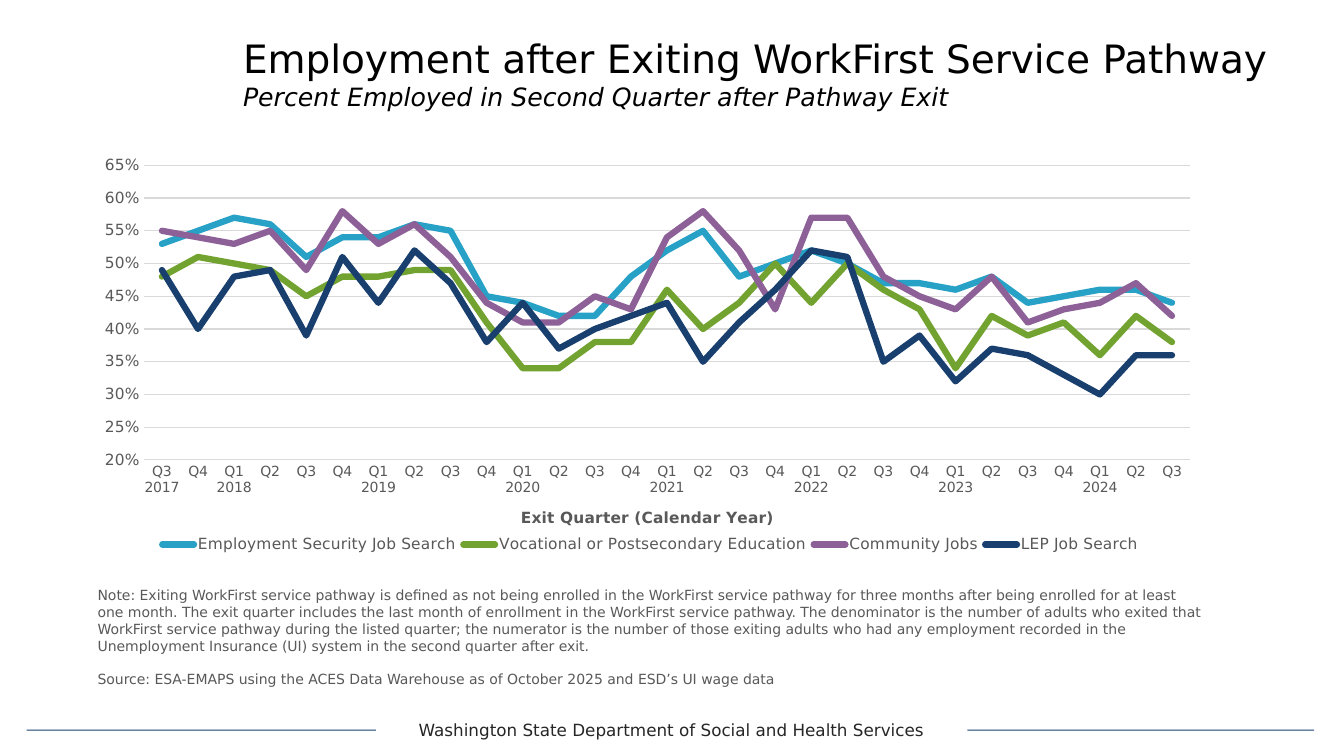
from lxml import etree
from pptx import Presentation
from pptx.chart.data import CategoryChartData
from pptx.dml.color import RGBColor
from pptx.enum.chart import XL_CHART_TYPE as CT, XL_LEGEND_POSITION as LP, XL_TICK_MARK as TM
from pptx.enum.shapes import MSO_CONNECTOR as CONN
from pptx.enum.text import MSO_ANCHOR as ANCHOR, MSO_AUTO_SIZE as FIT, PP_ALIGN as AL
from pptx.oxml.ns import qn
from pptx.util import Cm, Pt

# Content
FONT, GREY, RULE, NAVY = "DejaVu Sans", "595959", "D9D9D9", "193F6F"
TITLE = [
    ("Employment after Exiting WorkFirst Service Pathway", dict(size=Pt(27.9))),
    ("Percent Employed in Second Quarter after Pathway Exit", dict(size=Pt(18), italic=True)),
]
NOTES = [
    "Note: Exiting WorkFirst service pathway is defined as not being enrolled in the WorkFirst "
    "service pathway for three months after being enrolled for at least one month. The exit quarter "
    "includes the last month of enrollment in the WorkFirst service pathway. The denominator is the "
    "number of adults who exited that WorkFirst service pathway during the listed quarter; the "
    "numerator is the number of those exiting adults who had any employment recorded in the "
    "Unemployment Insurance (UI) system in the second quarter after exit.",
    "Source: ESA-EMAPS using the ACES Data Warehouse as of October 2025 and ESD’s UI wage data",
]
FOOTER = "Washington State Department of Social and Health Services"
AXIS_TITLE = "Exit Quarter (Calendar Year)"
FIRST_YEAR, FIRST_QUARTER = 2017, 3
PATHWAYS = [  # name, colour, percent employed by quarter
    ("Employment Security Job Search", "27A1C6",
     [53, 55, 57, 56, 51, 54, 54, 56, 55, 45, 44, 42, 42, 48, 52,
      55, 48, 50, 52, 50, 47, 47, 46, 48, 44, 45, 46, 46, 44]),
    ("Vocational or Postsecondary Education", "72A331",
     [48, 51, 50, 49, 45, 48, 48, 49, 49, 41, 34, 34, 38, 38, 46,
      40, 44, 50, 44, 50, 46, 43, 34, 42, 39, 41, 36, 42, 38]),
    ("Community Jobs", "8D6198",
     [55, 54, 53, 55, 49, 58, 53, 56, 51, 44, 41, 41, 45, 43, 54,
      58, 52, 43, 57, 57, 48, 45, 43, 48, 41, 43, 44, 47, 42]),
    ("LEP Job Search", NAVY,
     [49, 40, 48, 49, 39, 51, 44, 52, 47, 38, 44, 37, 40, 42, 44,
      35, 41, 46, 52, 51, 35, 39, 32, 37, 36, 33, 30, 36, 36]),
]


def rgb(value):
    return RGBColor.from_string(value)


def style(font, color, **values):
    font.name = FONT
    font.color.rgb = rgb(color)
    for key, value in values.items():
        setattr(font, key, value)


def stroke(line, color, width):
    line.color.rgb = rgb(color)
    line.width = Pt(width)


def quarter_label(i):
    year, quarter = divmod(FIRST_QUARTER - 1 + i, 4)
    label = f"Q{quarter + 1}"
    return f"{label}\n{FIRST_YEAR + year}" if i == 0 or quarter == 0 else label


def set_layout(parent, index, inner=False, **box):
    """Place a chart part by fractions of the chart area."""
    for old in parent.findall(qn("c:layout")):
        parent.remove(old)
    layout = etree.Element(qn("c:layout"))
    manual = etree.SubElement(layout, qn("c:manualLayout"))
    if inner:
        etree.SubElement(manual, qn("c:layoutTarget")).set("val", "inner")
    for mode in ("xMode", "yMode"):
        etree.SubElement(manual, qn(f"c:{mode}")).set("val", "edge")
    for key, value in box.items():
        etree.SubElement(manual, qn(f"c:{key}")).set("val", str(value))
    parent.insert(index, layout)


def add_text(s, box, lines, align, color, size):
    sp = s.shapes.add_textbox(*map(Cm, box))
    tf = sp.text_frame
    tf.word_wrap = True
    for i, line in enumerate(lines):
        p = tf.paragraphs[0] if i == 0 else tf.add_paragraph()
        p.alignment = align
        if i:
            p.space_before = Pt(size * 1.16)
        r = p.add_run()
        r.text = line
        style(r.font, color, size=Pt(size))
    return sp


prs = Presentation()
prs.slide_width, prs.slide_height = Cm(33.87), Cm(19.05)
s = prs.slides.add_slide(prs.slide_layouts[5])

# Footer with a rule on each side
footer = add_text(s, (9.47, 18.02, 14.91, 0.76), [FOOTER], AL.CENTER, "262626", 12)
for outer_x, side in ((0.67, 1), (33.12, 3)):
    cx = s.shapes.add_connector(CONN.STRAIGHT, Cm(outer_x), Cm(18.4), Cm(outer_x), Cm(18.4))
    cx.end_connect(footer, side)
    stroke(cx.line, NAVY, 0.75)
    etree.SubElement(cx._element.spPr, qn("a:effectLst"))

# Title and subtitle
title = s.shapes.title
title.left, title.top, title.width, title.height = map(Cm, (5.87, 0, 26.8, 3.68))
tf = title.text_frame
tf.auto_size, tf.word_wrap, tf.vertical_anchor = FIT.NONE, True, ANCHOR.MIDDLE
p = tf.paragraphs[0]
p.alignment = AL.LEFT
for i, (text, fmt) in enumerate(TITLE):
    if i:
        p.add_line_break()
    r = p.add_run()
    r.text = text
    style(r.font, "000000", **fmt)

# Chart
data = CategoryChartData(number_format="0%")
data.categories = [quarter_label(i) for i in range(len(PATHWAYS[0][2]))]
for name, _, values in PATHWAYS:
    data.add_series(name, [v / 100 for v in values])
chart = s.shapes.add_chart(CT.LINE, *map(Cm, (2.21, 3.73, 28.35, 10.92)), data).chart
chart.has_title = False
style(chart.font, "000000", size=Pt(10))
plot = chart.plots[0]
plot.vary_by_categories = False
for series, (_, color, _) in zip(plot.series, PATHWAYS):
    series.smooth = False
    stroke(series.format.line, color, 4.5)
for ser in chart.element.iter(qn("c:ser")):
    ser.find(".//" + qn("a:ln")).set("cap", "rnd")

# Axes
cat, val = chart.category_axis, chart.value_axis
for axis, size in ((cat, 10), (val, 11)):
    axis.major_tick_mark = axis.minor_tick_mark = TM.NONE
    style(axis.tick_labels.font, GREY, size=Pt(size))
# Automatic rotation keeps each year on one line
cat._element.find(qn("c:txPr")).find(qn("a:bodyPr")).set("rot", "-60000000")
stroke(cat.format.line, RULE, 0.75)
p = cat.axis_title.text_frame.paragraphs[0]
r = p.add_run()
r.text = AXIS_TITLE
style(r.font, GREY, size=Pt(11), bold=True)
val.minimum_scale, val.maximum_scale, val.major_unit = 0.2, 0.65, 0.05
val.tick_labels.number_format, val.tick_labels.number_format_is_linked = "0%", False
val.format.line.fill.background()
stroke(val.major_gridlines.format.line, RULE, 0.75)

# Legend and plot placement
chart.has_legend = True
chart.legend.position, chart.legend.include_in_layout = LP.BOTTOM, False
style(chart.legend.font, GREY, size=Pt(11))
set_layout(chart.element.find(".//" + qn("c:plotArea")), 0, inner=True, x=0.05, y=0.04, w=0.93, h=0.68)
set_layout(chart.element.find(".//" + qn("c:legend")), 1, x=0.06, y=0.88, w=0.88, h=0.07)

# Notes under the chart
add_text(s, (2.21, 14.66, 28.35, 2.82), NOTES, AL.LEFT, GREY, 10)

prs.save("out.pptx")
